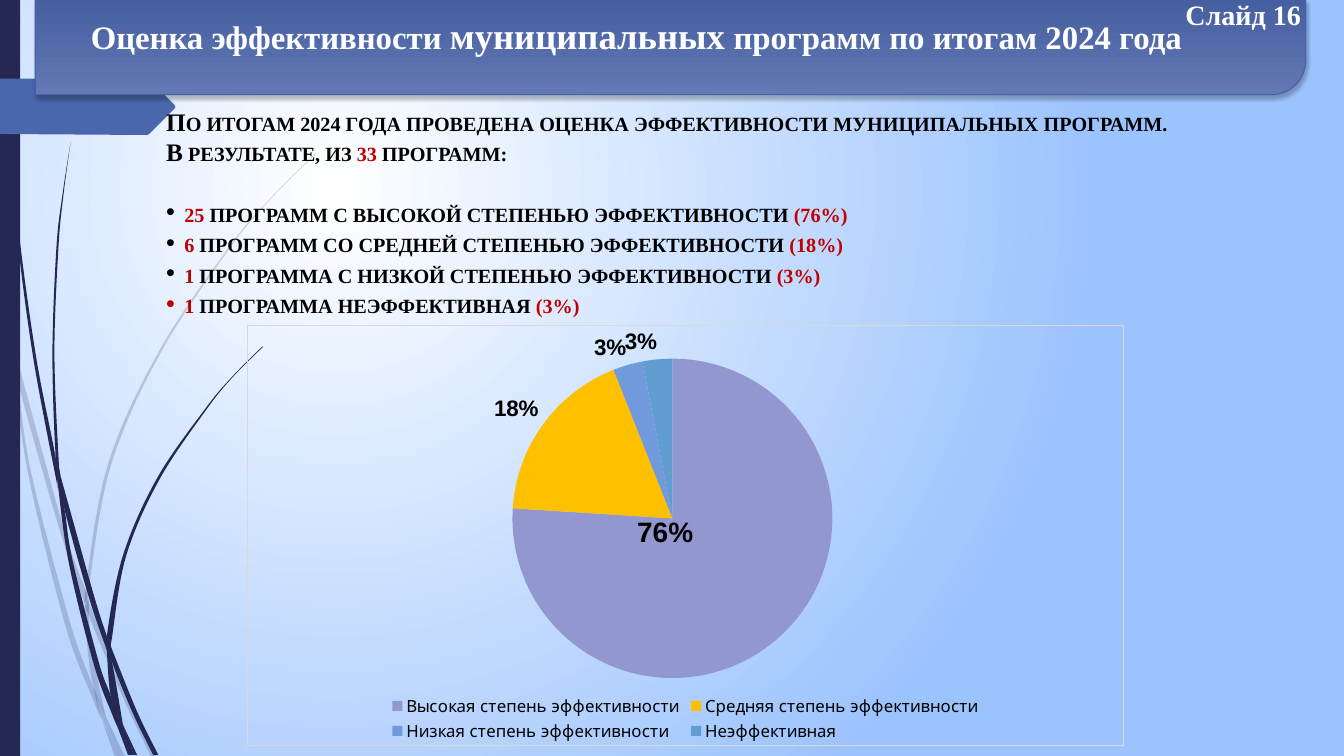
from dataclasses import dataclass

from lxml.etree import SubElement
from pptx import Presentation
from pptx.chart.data import CategoryChartData
from pptx.dml.color import RGBColor
from pptx.enum.chart import XL_CHART_TYPE, XL_LABEL_POSITION, XL_LEGEND_POSITION
from pptx.enum.shapes import MSO_SHAPE
from pptx.enum.text import MSO_ANCHOR, MSO_AUTO_SIZE, PP_ALIGN
from pptx.oxml import parse_xml
from pptx.oxml.ns import nsdecls, qn
from pptx.util import Inches, Pt


@dataclass(frozen=True)
class Theme:
    cell: float = 0.1
    fonts: tuple = ("Times New Roman", "Arial", "Quicksand")
    back: tuple = ("FFFFFF", "9BC3FE")
    head: tuple = ("6378B4", "455FA0")
    slices: tuple = ("9297CF", "FFC000", "719ADC", "629DD1")
    white: str = "FFFFFF"
    navy: str = "242852"
    blue: str = "4A66AC"
    edge: str = "4761A4"
    black: str = "000000"
    red: str = "C00000"
    frame: str = "D9D9D9"
    sizes: tuple = (23.4, 26.1, 20, 18, 16, 12, 10)
    pitch: float = 21.7


THEME = Theme()
SERIF, SANS, ROUND = THEME.fonts
HEAD, LARGE, PAGE, BODY, LABEL, KEY, SMALL = THEME.sizes


def rgb(code):
    return RGBColor.from_string(code)


def style(font, size=BODY, color=THEME.black, face=SERIF, bold=True):
    font.size, font.name, font.bold = Pt(size), face, bold
    font.color.rgb = rgb(color)


def write(para, text, caps=False, **form):
    run = para.add_run()
    run.text = text
    style(run.font, **form)
    if caps:
        run.font._element.set("cap", "small")


def bends(knots):
    ends = [knots[0], *knots, knots[-1]]
    return [([q + (r - p) / 6 for p, q, r in zip(a, b, c)], [r - (s - q) / 6 for q, r, s in zip(b, c, d)])
            for a, b, c, d in zip(ends, ends[1:], ends[2:], ends[3:])]


class Deck:
    def __init__(self, theme):
        self.theme = theme
        self.file = Presentation()
        self.file.slide_width, self.file.slide_height = Inches(13.33), Inches(7.5)
        self.slide = self.file.slides.add_slide(self.file.slide_layouts[5])
        self.shapes = self.slide.shapes

    def grid(self, *cells):
        return [Inches(n * self.theme.cell) for n in cells]

    def blend(self, fill, colors):
        fill.gradient()
        for place, (stop, color) in enumerate(zip(fill.gradient_stops, colors)):
            stop.color.rgb, stop.position = rgb(color), place

    def back(self):
        self.blend(self.slide.background.fill, self.theme.back)
        grad = self.slide.element.find(".//" + qn("a:gradFill"))
        grad.remove(grad.find(qn("a:lin")))
        way = SubElement(grad, qn("a:path"), path="circle")
        SubElement(way, qn("a:fillToRect"), l="50000", t="50000", r="100000", b="100000")

    def paint(self, shape, color, alpha=100):
        shape.shadow.inherit = False
        shape.fill.solid()
        shape.fill.fore_color.rgb = rgb(color)
        shape.line.fill.background()
        if alpha < 100:
            tint = shape.element.spPr.find(".//" + qn("a:srgbClr"))
            SubElement(tint, qn("a:alpha"), val=str(alpha * 1000))

    def shape(self, dots, color, alpha=100):
        first, *rest = [self.grid(*dot) for dot in dots]
        pen = self.shapes.build_freeform(*first)
        pen.add_line_segments(rest, close=True)
        form = pen.convert_to_shape()
        self.paint(form, color, alpha)
        return form

    def wisp(self, left, right, alpha):
        right = right[::-1]
        form = self.shape(left + right, self.theme.navy, alpha)
        nodes = list(form.element.iter(qn("a:lnTo")))
        for node, bend in zip(nodes, bends(left) + [()] + bends(right)):
            for i, dot in enumerate(bend):
                node.tag = qn("a:cubicBezTo")
                x, y = self.grid(*dot)
                point = SubElement(node, qn("a:pt"), x=str(x - form.left), y=str(y - form.top))
                node.insert(i, point)

    def bar(self, *cells):
        self.paint(self.shapes.add_shape(MSO_SHAPE.RECTANGLE, *self.grid(*cells)), self.theme.navy)

    def banner(self, *cells):
        box = self.shapes.add_shape(MSO_SHAPE.ROUND_1_RECTANGLE, *self.grid(*cells))
        box.adjustments[0] = 0.36
        box.shadow.inherit = False
        self.blend(box.fill, self.theme.head)
        box.fill.gradient_angle = 270
        box.line.color.rgb, box.line.width = rgb(self.theme.edge), Pt(0.75)
        box.element.spPr.find(qn("a:xfrm")).set("flipV", "1")
        glow = SubElement(box.element.spPr.find(qn("a:effectLst")), qn("a:outerShdw"),
                          blurRad=str(Pt(3)), dist=str(Pt(2)), dir="5400000", rotWithShape="0")
        SubElement(SubElement(glow, qn("a:srgbClr"), val=self.theme.black), qn("a:alpha"), val="25000")

    def title(self, parts, *cells):
        box = self.shapes.title
        self.shapes.element.append(box.element)
        box.left, box.top, box.width, box.height = self.grid(*cells)
        frame = box.text_frame
        frame.auto_size, frame.vertical_anchor = MSO_AUTO_SIZE.NONE, MSO_ANCHOR.TOP
        frame.margin_left = frame.margin_right = 0
        frame.paragraphs[0].alignment = PP_ALIGN.CENTER
        for text, size in parts:
            write(frame.paragraphs[0], text, size=size, color=self.theme.white)

    def frame(self, *cells):
        frame = self.shapes.add_textbox(*self.grid(*cells)).text_frame
        frame.word_wrap = True
        return frame

    def page(self, text, *cells):
        para = self.frame(*cells).paragraphs[0]
        para.alignment = PP_ALIGN.CENTER
        write(para, text, size=PAGE, color=self.theme.white)

    def bullet(self, para, color):
        props = para._p.get_or_add_pPr()
        props.set("marL", str(Inches(0.18)))
        props.set("indent", str(-Inches(0.18)))
        SubElement(SubElement(props, qn("a:buClr")), qn("a:srgbClr"), val=color)
        SubElement(props, qn("a:buFont"), typeface=SANS)
        SubElement(props, qn("a:buChar"), char="•")

    def body(self, lines, *cells):
        frame = self.frame(*cells)
        for i, (dot, parts) in enumerate(lines):
            para = frame.add_paragraph() if i else frame.paragraphs[0]
            para.line_spacing = Pt(self.theme.pitch)
            if dot:
                para.space_before = Pt(0 if lines[i - 1][0] else self.theme.pitch)
                self.bullet(para, dot)
            for text, color in parts:
                write(para, text, color=color, caps=True)

    def pie(self, rows, *cells):
        data = CategoryChartData()
        data.categories = list(rows)
        data.add_series("Series 1", list(rows.values()))
        chart = self.shapes.add_chart(XL_CHART_TYPE.PIE, *self.grid(*cells), data).chart
        chart.has_title, chart.has_legend = False, True
        style(chart.font, size=SMALL, face=ROUND, bold=False)
        chart.legend.position, chart.legend.include_in_layout = XL_LEGEND_POSITION.BOTTOM, False
        style(chart.legend.font, size=KEY, face=ROUND, bold=False)
        chart.plots[0].vary_by_categories = True
        series = chart.plots[0].series[0]
        for i, color in enumerate(self.theme.slices):
            fill = series.points[i].format.fill
            fill.solid()
            fill.fore_color.rgb = rgb(color)
        tags, main = series.data_labels, series.points[0].data_label
        tags.show_value, tags.show_percentage = False, True
        tags.number_format, tags.number_format_is_linked = "0%", False
        for tag, size in ((tags, LABEL), (main, PAGE)):
            tag.position = XL_LABEL_POSITION.OUTSIDE_END
            style(tag.font, size=size, face=SANS)
        root = chart.element
        for lead in root.iter(qn("c:showLeaderLines")):
            lead.set("val", "0")
        first = root.find(".//" + qn("c:dLbl"))
        first.find(qn("c:showVal")).set("val", "0")
        first.find(qn("c:showPercent")).set("val", "1")
        first.find(qn("c:idx")).addnext(self.layout(x=-0.17, y=-0.29))
        area = root.find(".//" + qn("c:plotArea"))
        for old in area.findall(qn("c:layout")):
            area.remove(old)
        area.insert(0, self.layout(layoutTarget="inner", xMode="edge", yMode="edge", x=0.18, y=0.08, w=0.61, h=0.76))
        root.find(qn("c:chart")).addnext(parse_xml(
            f'<c:spPr {nsdecls("c", "a")}><a:noFill/><a:ln w="{Pt(0.75)}"><a:solidFill>'
            f'<a:srgbClr val="{self.theme.frame}"/></a:solidFill></a:ln></c:spPr>'))

    def layout(self, **parts):
        node = parse_xml(f'<c:layout {nsdecls("c")}><c:manualLayout/></c:layout>')
        for name, value in parts.items():
            SubElement(node[0], qn("c:" + name), val=str(value))
        return node


PALE = [
    ([(0, 29.9), (1, 34.4), (1.1, 35)], [(0, 28.2), (0.9, 32.2), (1.1, 35)]),
    ([(1.4, 34.5), (1.7, 37.6), (5.8, 52.2), (8.4, 59.9)], [(1.4, 34.5), (6.2, 52), (8.5, 58.6)]),
    ([(8.8, 59.6), (8.8, 61), (12.3, 69.4), (15, 75.1)], [(8.8, 59.6), (9.2, 60.7), (12.7, 69.2), (15.5, 75.1)]),
    ([(10.5, 71.1), (11.9, 75.1)], [(10.5, 71.1), (12.4, 75.1)]),
    ([(1.1, 35), (2.8, 47), (6.5, 62.1), (9.2, 69.3), (10.1, 71.4)],
     [(1.1, 35), (1.7, 37.6), (3.1, 46.9), (7, 61.9), (9.3, 68.3), (9.9, 70.7), (10.1, 71.4)]),
    ([(8.4, 59.9), (8.7, 64.6), (9.3, 68.3), (10.5, 71.1)], [(8.4, 59.9), (8.8, 61), (9.1, 64.6), (10.5, 71.1)]),
    ([(31.2, 15.3), (26.8, 19.7), (22.8, 24.4), (15.8, 34.8), (10.7, 46.1), (8.5, 58.4), (8.8, 59.6)],
     [(31.2, 15.4), (26.8, 19.8), (22.9, 24.5), (16, 34.9), (11, 46.2), (8.8, 58.4), (8.8, 59.6)]),
    ([(10.1, 71.4), (11.4, 75.1)], [(10.1, 71.4), (11.9, 75.1)]),
    ([(8.5, 58.6), (8.4, 59.9), (8.8, 61)], [(8.5, 58.6), (8.8, 59.6), (8.8, 61)]),
    ([(9.3, 68.3), (9.9, 70.7), (11.9, 75.1)], [(9.3, 68.3), (10.5, 71.1), (11.9, 75.1)]),
]
DEEP = [
    ([(0.3, 0), (0.7, 11), (1.7, 23.3), (3.3, 35.5), (5.6, 47.7), (5.7, 48.1)],
     [(0.4, 0), (0.8, 10.9), (1.9, 23.2), (3.6, 35.5), (5.5, 45.3), (5.7, 48.1)]),
    ([(6, 47.2), (6.4, 50.5), (8.8, 59.2), (10.6, 64.5)], [(6, 47.2), (9.3, 59), (10.6, 63.1)]),
    ([(11, 64.1), (11.1, 65.6), (13.2, 70.8), (15.2, 74.9)], [(11, 64.1), (11.3, 64.9), (13.6, 70.6), (15.7, 74.9)]),
    ([(5.7, 47.7), (6.8, 55.7), (9.3, 65.9), (11.1, 70.8), (11.7, 72.2)],
     [(5.7, 47.7), (6.4, 50.5), (7.2, 55.6), (9.8, 65.7), (11, 69.1), (11.7, 72.2)]),
    ([(7, 14.1), (6.2, 19.3), (5.6, 24.5), (5.2, 34.9), (5.5, 44.9), (6, 47.2)],
     [(7, 14.1), (6.3, 19.3), (5.8, 24.5), (5.4, 34.9), (5.8, 45.3), (6, 47.2)]),
    ([(12.2, 71.9), (13.3, 74.9)], [(12.2, 71.9), (13.6, 74.9)]),
    ([(5.5, 44.9), (5.7, 47.7), (6.4, 50.5)], [(5.5, 44.9), (6, 47.2), (6.4, 50.5)]),
    ([(26, 34.4), (23.1, 37.3), (20.4, 40.5), (15.6, 47.4), (12.2, 55.1), (10.6, 63.1), (11, 64.1)],
     [(26.1, 34.4), (23.1, 37.4), (20.5, 40.6), (15.8, 47.6), (12.5, 55.2), (11.1, 63.3), (11, 64.1)]),
    ([(11.7, 72.2), (12.7, 74.9)], [(11.7, 72.2), (13.1, 74.9)]),
    ([(10.6, 64.5), (11, 69.1), (12.2, 71.9)], [(10.6, 64.5), (11.1, 65.6), (12.2, 71.9)]),
    ([(10.6, 63.1), (10.6, 64.5), (11.1, 65.6)], [(10.6, 63.1), (11, 64.1), (11.1, 65.6)]),
    ([(11, 69.1), (11.7, 72.2), (13, 74.9)], [(11, 69.1), (12.2, 71.9), (13.3, 74.9)]),
]
ITEMS = [("25", "программ с высокой степенью эффективности", "(76%)", THEME.black),
         ("6", "программ со средней степенью эффективности", "(18%)", THEME.black),
         ("1", "программа с низкой степенью эффективности", "(3%)", THEME.black),
         ("1", "программа неэффективная", "(3%)", THEME.red)]
RATES = {"Высокая степень эффективности": 76, "Средняя степень эффективности": 18,
         "Низкая степень эффективности": 3, "Неэффективная": 3}


def main():
    black, red = THEME.black, THEME.red
    deck = Deck(THEME)
    deck.back()
    for wisps, alpha in ((PALE, 20), (DEEP, 100)):
        for left, right in wisps:
            deck.wisp(left, right, alpha)
    deck.bar(0, 0, 2, 75)
    deck.shape([(0, 7.8), (14.6, 7.8), (14.8, 7.9), (17.3, 10.4), (17.4, 10.6), (17.3, 10.8),
                (14.8, 13.3), (14.6, 13.4), (0, 13.3)], THEME.blue)
    deck.banner(3.5, 0, 126, 9.4)
    deck.page("Слайд 16", 116.2, -0.7, 14.2, 4.5)
    deck.title([("Оценка эффективности ", HEAD), ("муниципальных", LARGE),
                (" программ по итогам 2024 года", HEAD)], 7.4, 0.8, 111.4, 7.7)
    lines = [("", [("По итогам 2024 года проведена оценка эффективности муниципальных программ.", black)]),
             ("", [("В результате, из ", black), ("33 ", red), ("программ:", black)])]
    lines += [(dot, [(count, red), (f" {name} ", black), (rate, red)]) for count, name, rate, dot in ITEMS]
    deck.body(lines, 15.5, 10, 107.1, 26.3)
    deck.pie(RATES, 24.5, 32.2, 87, 41.8)
    deck.file.save("out.pptx")


if __name__ == "__main__":
    main()
